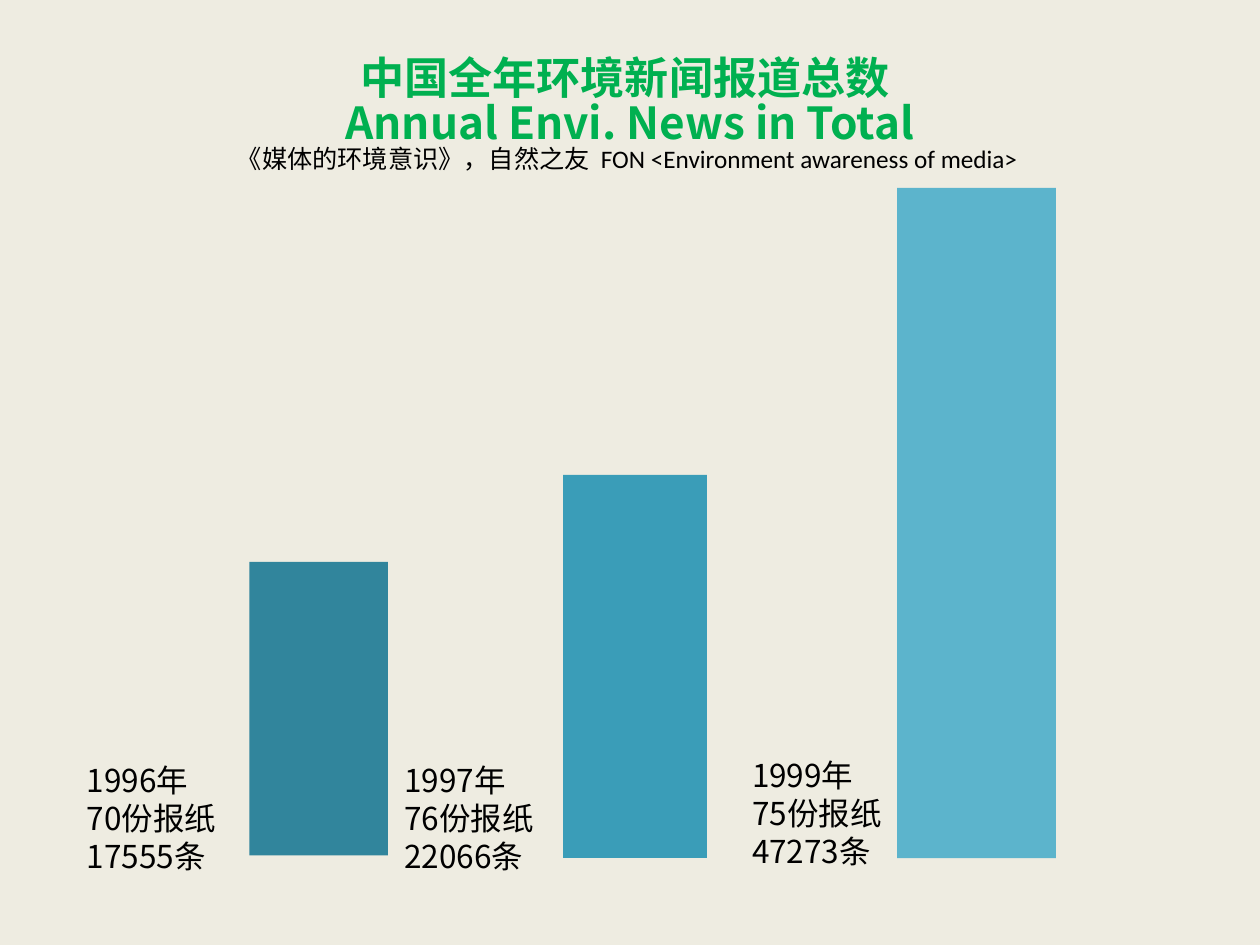
from lxml import etree
from pptx import Presentation
from pptx.dml.color import RGBColor
from pptx.enum import shapes, text
from pptx.oxml import ns
from pptx.util import Inches, Pt

COLORS = {
    "background": "EEECE1",
    "heading": "00B050",
    "body": "000000",
    "1996": "31859C",
    "1997": "3A9DB8",
    "1999": "5CB4CC",
}
CJK_FONT = "Noto Sans CJK SC"
LATIN_FONT = "Calibri"

# year, newspapers, news items, bar box, label box
YEARS = [
    ("1996", 70, 17555, (1.98, 4.46, 1.1, 2.33), (0.59, 5.99, 1.31, 1.01)),
    ("1997", 76, 22066, (4.47, 3.77, 1.14, 3.04), (3.11, 5.99, 1.25, 1.31)),
    ("1999", 75, 47273, (7.12, 1.49, 1.26, 5.32), (5.87, 5.95, 1.25, 1.01)),
]


class NewsSlide:
    def __init__(self, presentation):
        self.slide = presentation.slides.add_slide(presentation.slide_layouts[6])
        background = self.slide.background.fill
        background.solid()
        background.fore_color.rgb = self.color("background")

    def color(self, key):
        return RGBColor.from_string(COLORS[key])

    def style(self, font, properties, size, color, name=CJK_FONT, bold=False):
        """Style a font; properties is the XML element that also takes the East Asian font."""
        font.size, font.bold, font.name = Pt(size), bold, name
        font.color.rgb = self.color(color)
        etree.SubElement(properties, ns.qn("a:ea")).set("typeface", CJK_FONT)

    def text_frame(self, box):
        frame = self.slide.shapes.add_textbox(*map(Inches, box)).text_frame
        frame.word_wrap = True
        return frame

    def bar(self, year, box):
        bar = self.slide.shapes.add_shape(
            shapes.MSO_SHAPE.RECTANGLE, *map(Inches, box))
        bar.shadow.inherit = False
        bar.fill.solid()
        bar.fill.fore_color.rgb = self.color(year)
        bar.line.fill.background()

    def label(self, lines, box):
        frame = self.text_frame(box)
        frame.text = "\n".join(lines)
        for paragraph in frame.paragraphs:
            paragraph.line_spacing = Pt(21.7)
            font = paragraph.font
            self.style(font, paragraph._p.pPr.defRPr, 18, "body")

    def title(self, heading_lines, source, box):
        frame = self.text_frame(box)
        frame.vertical_anchor = text.MSO_ANCHOR.MIDDLE
        paragraph = frame.paragraphs[0]
        paragraph.alignment = text.PP_ALIGN.CENTER
        paragraph.line_spacing = 0.84
        for line in heading_lines:
            run = paragraph.add_run()
            run.text = line
            self.style(run.font, run._r.get_or_add_rPr(), 25.2, "heading", bold=True)
            paragraph.add_line_break()
        run = paragraph.add_run()
        run.text = source
        self.style(run.font, run._r.get_or_add_rPr(), 14.4, "body", LATIN_FONT)


def main():
    presentation = Presentation()
    presentation.slide_width = Inches(10)
    presentation.slide_height = Inches(7.5)
    news = NewsSlide(presentation)
    for year, papers, items, bar_box, label_box in YEARS:
        news.bar(year, bar_box)
        news.label([f"{year}年", f"{papers}份报纸", f"{items}条"], label_box)
    news.title(
        ["中国全年环境新闻报道总数 ", "Annual Envi. News in Total"],
        "《媒体的环境意识》，自然之友  FON <Environment awareness of media> ",
        (0.5, 0.3, 9, 1.25),
    )
    presentation.save("out.pptx")


if __name__ == "__main__":
    main()
